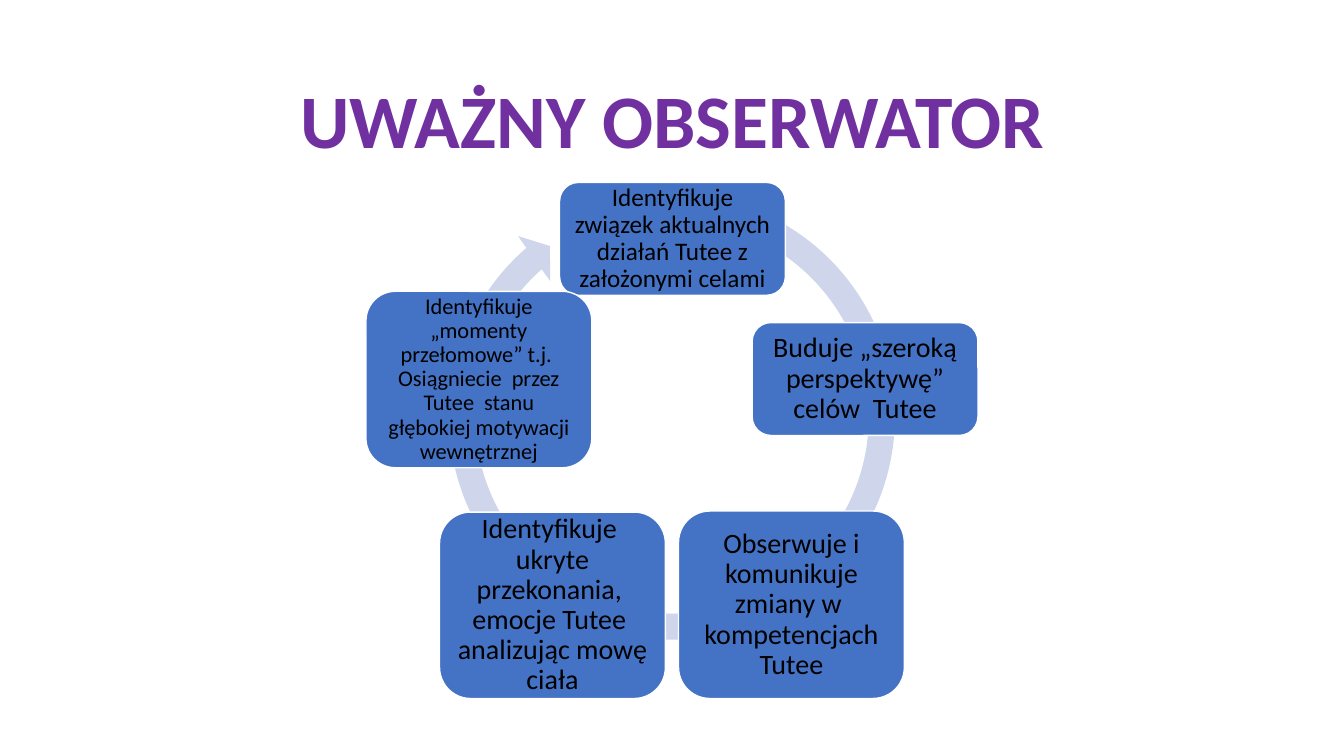
from pptx import Presentation
from pptx.dml.color import RGBColor
from pptx.enum.shapes import MSO_SHAPE
from pptx.enum.text import MSO_ANCHOR, PP_ALIGN
from pptx.util import Inches, Pt


def color(hex_string):
    return RGBColor.from_string(hex_string)


def write_text(shape, text, size, hex_string, margin, bold=False):
    frame = shape.text_frame
    frame.word_wrap = True
    frame.vertical_anchor = MSO_ANCHOR.MIDDLE
    frame.margin_left = frame.margin_right = Inches(margin)
    frame.margin_top = frame.margin_bottom = Inches(margin)
    frame.text = text
    paragraph = frame.paragraphs[0]
    paragraph.alignment = PP_ALIGN.CENTER
    paragraph.line_spacing = 0.9
    font = paragraph.runs[0].font
    font.name = "Calibri"
    font.size = Pt(size)
    font.bold = bold
    font.color.rgb = color(hex_string)


presentation = Presentation()
presentation.slide_width = Inches(13.33)
presentation.slide_height = Inches(7.5)
slide = presentation.slides.add_slide(presentation.slide_layouts[6])

# Title
title = slide.shapes.add_textbox(Inches(0.92), Inches(0.4), Inches(11.5), Inches(1.66))
write_text(title, "UWAŻNY OBSERWATOR", 54, "7030A0", 0.05, bold=True)

# Circular arrow behind the steps
arrow = slide.shapes.add_shape(
    MSO_SHAPE.CIRCULAR_ARROW, Inches(4.31), Inches(1.78), Inches(4.71), Inches(4.71))
arrow.shadow.inherit = False
for index, value in enumerate([0.055, 3.307, 137.364, 174.101, 0.058]):
    arrow.adjustments[index] = value
arrow.fill.solid()
arrow.fill.fore_color.rgb = color("CFD5EA")
arrow.line.fill.background()

# Steps of the cycle, clockwise: left, top, height, font size, margin, text
steps = [
    (5.55, 1.81, 1.12, 18, 0.07,
     "Identyfikuje związek aktualnych działań Tutee z założonymi celami"),
    (7.46, 3.2, 1.12, 20, 0.08,
     "Buduje „szeroką perspektywę” celów  Tutee"),
    (6.73, 5.07, 1.86, 20, 0.08,
     "Obserwuje i komunikuje zmiany w  kompetencjach Tutee"),
    (4.36, 5.08, 1.85, 20, 0.08,
     "Identyfikuje  ukryte przekonania,  emocje Tutee  analizując mowę ciała"),
    (3.63, 2.89, 1.75, 16, 0.07,
     "Identyfikuje „momenty przełomowe” t.j.  Osiągniecie  przez Tutee  stanu "
     "głębokiej motywacji wewnętrznej"),
]
for left, top, height, size, margin, text in steps:
    step = slide.shapes.add_shape(
        MSO_SHAPE.ROUNDED_RECTANGLE, Inches(left), Inches(top), Inches(2.24), Inches(height))
    step.shadow.inherit = False
    step.fill.solid()
    step.fill.fore_color.rgb = color("4472C4")
    step.line.color.rgb = color("FFFFFF")
    step.line.width = Pt(1)
    write_text(step, text, size, "000000", margin)

presentation.save("out.pptx")
